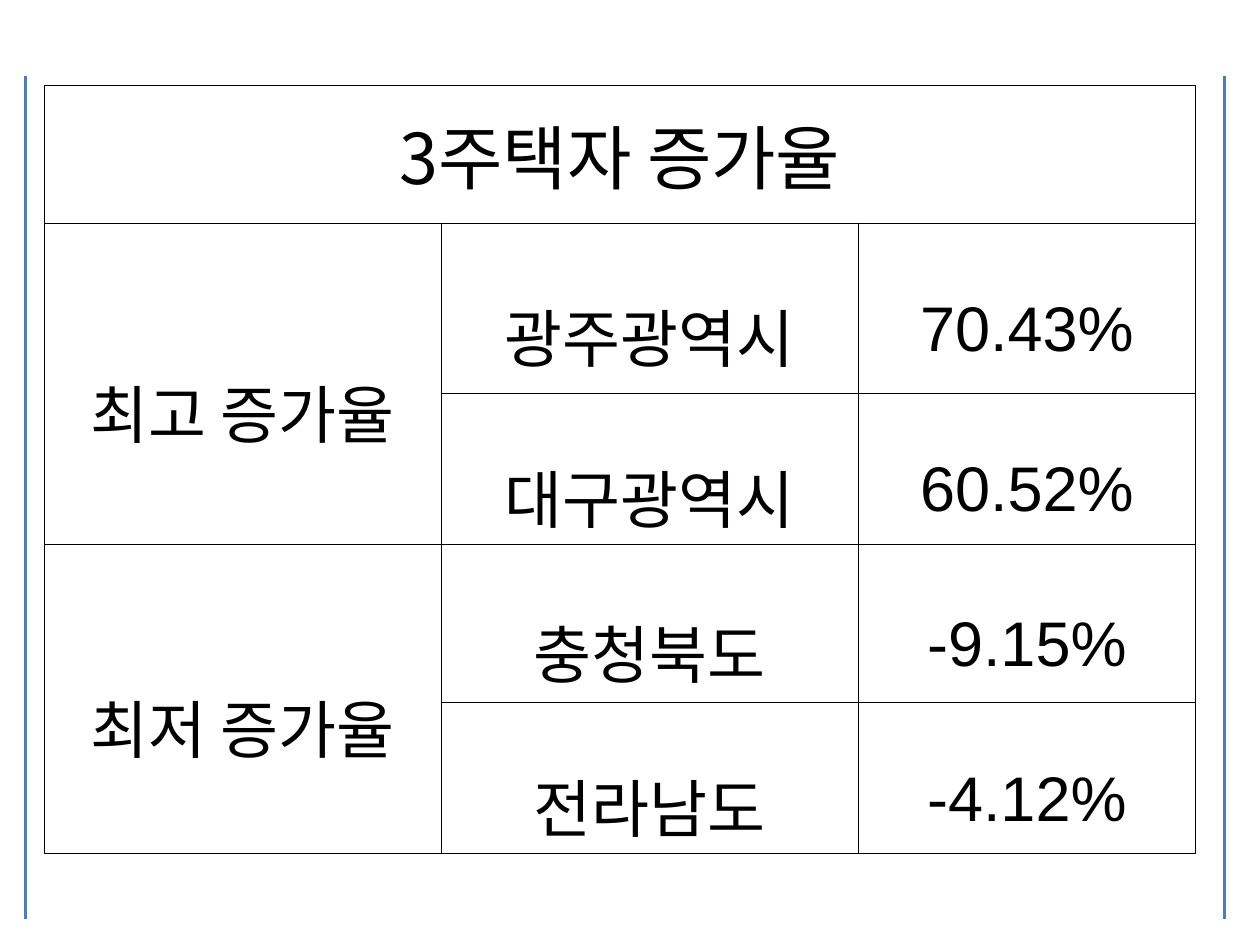
"""Build a slide with a table of the highest and lowest growth rates of three-home owners."""
from lxml.etree import SubElement
from pptx import Presentation
from pptx.dml.color import RGBColor
from pptx.enum.shapes import MSO_CONNECTOR
from pptx.enum.text import MSO_ANCHOR, PP_ALIGN
from pptx.oxml import parse_xml
from pptx.oxml.ns import nsdecls, qn
from pptx.util import Inches, Pt

TITLE = "3주택자 증가율"
GROUPS = [
    ("최고 증가율", [("광주광역시", "70.43%"), ("대구광역시", "60.52%")]),
    ("최저 증가율", [("충청북도", "-9.15%"), ("전라남도", "-4.12%")]),
]
COLORS = {"text": "000000", "border": "000000", "rule": "4B7EBC", "cell": "FFFFFF"}
KOREAN, LATIN = "Noto Sans CJK KR", "Arial"
COLUMNS = [3.15, 3.31, 2.68]
ROWS = [1.09, 1.35, 1.1, 1.26, 1.1]
TABLE_LEFT, TABLE_TOP = 0.35, 0.68
RULES_X, RULE_TOP, RULE_BOTTOM = (0.2, 9.72), 0.6, 7.29


def write(cell, text, size=36, font=LATIN, spacing=1.6):
    para = cell.text_frame.paragraphs[0]
    para.alignment = PP_ALIGN.CENTER
    para.line_spacing = spacing
    span = para.add_run()
    span.text = text
    span.font.size = Pt(size)
    span.font.name = font
    span.font.color.rgb = RGBColor.from_string(COLORS["text"])
    SubElement(span.font._element, qn("a:ea")).set("typeface", KOREAN)


def style_cell(cell):
    cell.vertical_anchor = MSO_ANCHOR.MIDDLE
    cell.margin_left = cell.margin_right = Inches(0.07)
    cell.margin_top = cell.margin_bottom = Inches(0.02)
    cell.fill.solid()
    cell.fill.fore_color.rgb = RGBColor.from_string(COLORS["cell"])
    properties = cell._tc.get_or_add_tcPr()
    for position, side in enumerate("LRTB"):
        properties.insert(position, parse_xml(
            f'<a:ln{side} {nsdecls("a")} w="{Pt(0.28)}"><a:solidFill>'
            f'<a:srgbClr val="{COLORS["border"]}"/></a:solidFill></a:ln{side}>'))


def add_table(page):
    table = page.shapes.add_table(
        len(ROWS), len(COLUMNS), Inches(TABLE_LEFT), Inches(TABLE_TOP),
        Inches(sum(COLUMNS)), Inches(sum(ROWS))).table
    table.first_row = table.horz_banding = False
    for column, width in zip(table.columns, COLUMNS):
        column.width = Inches(width)
    for row, height in zip(table.rows, ROWS):
        row.height = Inches(height)
    for cell in table.iter_cells():
        style_cell(cell)

    table.cell(0, 0).merge(table.cell(0, len(COLUMNS) - 1))
    write(table.cell(0, 0), TITLE, size=40, font=KOREAN, spacing=1.0)
    row = 1
    for label, regions in GROUPS:
        table.cell(row, 0).merge(table.cell(row + len(regions) - 1, 0))
        write(table.cell(row, 0), label)
        for region, rate in regions:
            write(table.cell(row, 1), region)
            write(table.cell(row, 2), rate)
            row += 1


def add_rule(page, x):
    rule = page.shapes.add_connector(
        MSO_CONNECTOR.STRAIGHT, Inches(x), Inches(RULE_TOP), Inches(x), Inches(RULE_BOTTOM))
    rule.line.color.rgb = RGBColor.from_string(COLORS["rule"])
    rule.line.width = Pt(1.75)
    SubElement(rule._element.spPr, qn("a:effectLst"))


def main():
    deck = Presentation()
    deck.slide_width, deck.slide_height = Inches(10), Inches(7.5)
    page = deck.slides.add_slide(deck.slide_layouts[6])
    add_table(page)
    for x in RULES_X:
        add_rule(page, x)
    deck.save("out.pptx")


if __name__ == "__main__":
    main()
